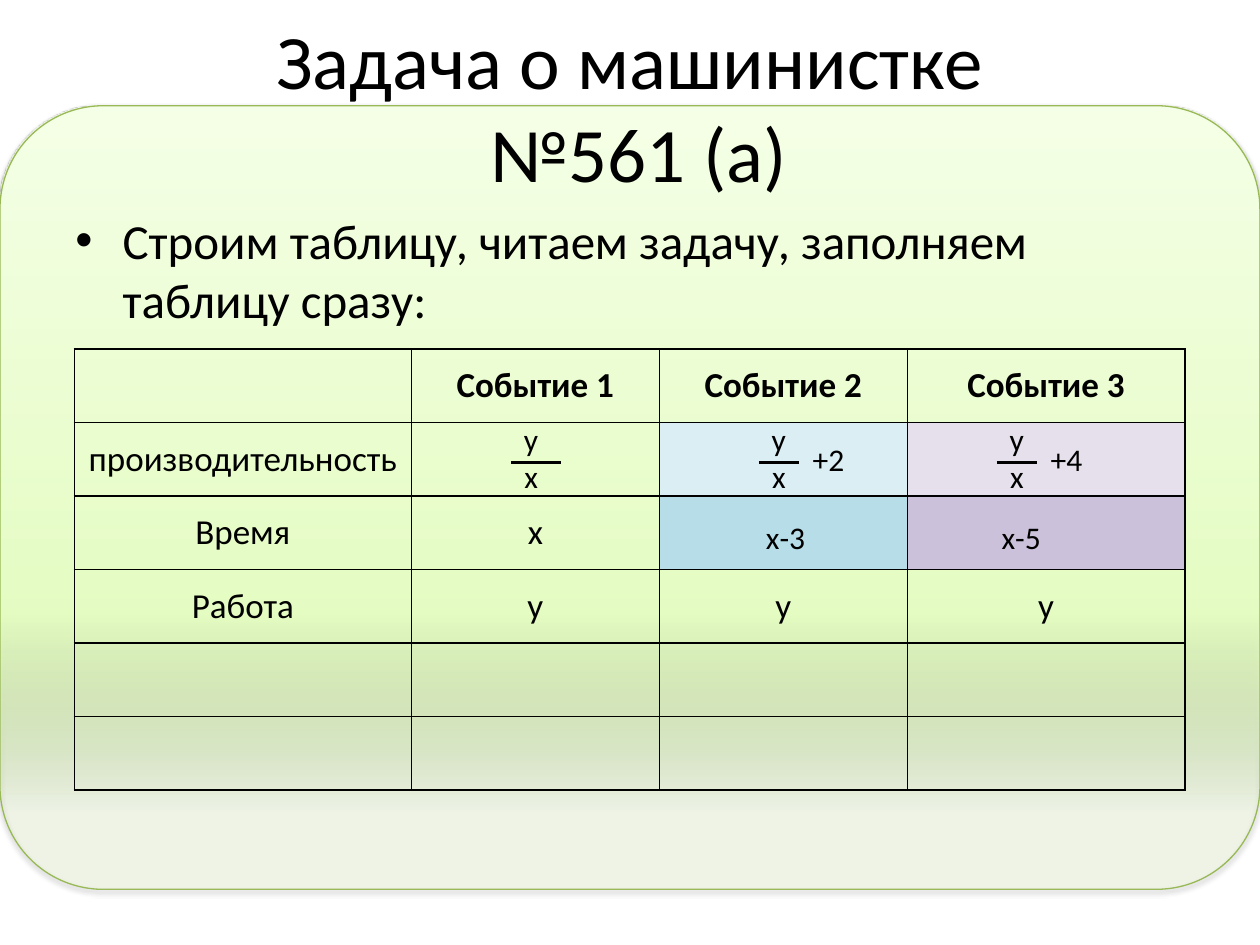
"""Build the slide about the typist problem with its table of events."""
import lxml.etree
import pptx
import pptx.dml.color
import pptx.enum.shapes
import pptx.enum.text
import pptx.oxml
import pptx.oxml.ns
import pptx.util

Pt = pptx.util.Pt
RGB = pptx.dml.color.RGBColor.from_string
CENTER = pptx.enum.text.PP_ALIGN.CENTER
MIDDLE = pptx.enum.text.MSO_ANCHOR.MIDDLE
NS = pptx.oxml.ns.nsdecls("a")
THEME = {
    "font": "Calibri", "text": "000000", "border": "98B955",
    "title": 44, "body": 28, "cell": 20, "label": 18,
    "gradient": [(10, "DAFDA7", 14), (35, "E4FCC2", 100), (100, "F5FFE7", 100)],
    "marks": {(1, 2): "DBEEF4", (1, 3): "E6E0EC", (2, 2): "B7DEE8", (2, 3): "CCC1DA"},
}


def write(tf, text, size, align=CENTER, bold=False):
    p = tf.paragraphs[0]
    p.text = text
    p.alignment = align
    p.font.name = THEME["font"]
    p.font.size = Pt(size)
    p.font.bold = bold
    p.font.color.rgb = RGB(THEME["text"])
    return p


def add_text(left, top, width, height, text, size, align=CENTER, wrap=True):
    tf = s.shapes.add_textbox(Pt(left), Pt(top), Pt(width), Pt(height)).text_frame
    tf.word_wrap = wrap
    write(tf, text, size, align)
    return tf


prs = pptx.Presentation()
prs.slide_width, prs.slide_height = Pt(720), Pt(540)
s = prs.slides.add_slide(prs.slide_layouts[6])

panel = s.shapes.add_shape(
    pptx.enum.shapes.MSO_SHAPE.ROUNDED_RECTANGLE, Pt(0), Pt(60.4), Pt(720), Pt(447.8))
panel.adjustments[0] = 0.132
panel.line.color.rgb = RGB(THEME["border"])
panel.line.width = Pt(0.75)
stops = "".join(
    f'<a:gs pos="{pos * 1000}"><a:srgbClr val="{color}"><a:alpha val="{alpha * 1000}"/></a:srgbClr></a:gs>'
    for pos, color, alpha in THEME["gradient"])
panel.line._ln.addprevious(pptx.oxml.parse_xml(
    f'<a:gradFill {NS} rotWithShape="1"><a:gsLst>{stops}</a:gsLst>'
    '<a:lin ang="16200000" scaled="0"/></a:gradFill>'))
panel.line._ln.addnext(pptx.oxml.parse_xml(
    f'<a:effectLst {NS}><a:outerShdw blurRad="{Pt(3.1)}" dist="{Pt(1.6)}" dir="5400000" rotWithShape="0">'
    f'<a:srgbClr val="{THEME["text"]}"><a:alpha val="38000"/></a:srgbClr></a:outerShdw></a:effectLst>'))

tf = add_text(36, 116.6, 648, 76, "Строим таблицу, читаем задачу, заполняем таблицу сразу:",
              THEME["body"], pptx.enum.text.PP_ALIGN.LEFT)
pPr = tf.paragraphs[0]._p.get_or_add_pPr()
pPr.set("marL", str(Pt(27)))
pPr.set("indent", str(Pt(-27)))
pPr.insert(0, pptx.oxml.parse_xml(f'<a:buFont {NS} typeface="Arial"/>'))
pPr.insert(1, pptx.oxml.parse_xml(f'<a:buChar {NS} char="•"/>'))

tf = add_text(41, -2.2, 648, 124.6, "Задача о машинистке \v№561 (а)", THEME["title"])
tf.vertical_anchor = MIDDLE

rows = [
    ["", "Событие 1", "Событие 2", "Событие 3"],
    ["производительность", "", "", ""],
    ["Время", "х", "", ""],
    ["Работа", "у", "у", "у"],
    [""] * 4,
    [""] * 4,
]
widths = [192.6, 141.7, 141.7, 158.7]
frame = s.shapes.add_table(len(rows), len(widths), Pt(42.5), Pt(199.5), Pt(sum(widths)), Pt(252))
table = frame.table
for column, width in zip(table.columns, widths):
    column.width = Pt(width)
for i, row in enumerate(rows):
    for j, text in enumerate(row):
        cell = table.cell(i, j)
        cell.vertical_anchor = MIDDLE
        write(cell.text_frame, text, THEME["cell"], bold=i == 0)
        if (i, j) in THEME["marks"]:
            cell.fill.solid()
            cell.fill.fore_color.rgb = RGB(THEME["marks"][i, j])
        else:
            cell.fill.background()
        tcPr = cell._tc.get_or_add_tcPr()
        for k, side in enumerate(["lnL", "lnR", "lnT", "lnB"]):
            tcPr.insert(k, pptx.oxml.parse_xml(
                f'<a:{side} {NS} w="{Pt(1)}"><a:solidFill><a:srgbClr val="{THEME["text"]}"/>'
                f'</a:solidFill></a:{side}>'))

for left, bar, extra in [(292, 28.4, ""), (433.6, 22.8, "+2"), (569.6, 22.8, "+4")]:
    add_text(left, 236.2, 22.8, 29, "у", THEME["label"], wrap=False)
    add_text(left + 0.3, 257.8, 22.4, 29, "х", THEME["label"], wrap=False)
    line = s.shapes.add_connector(
        pptx.enum.shapes.MSO_CONNECTOR.STRAIGHT, Pt(left), Pt(264.2), Pt(left + bar), Pt(264.2))
    line.line.color.rgb = RGB(THEME["text"])
    line.line.width = Pt(1.5)
    lxml.etree.SubElement(line._element.spPr, pptx.oxml.ns.qn("a:effectLst"))
    if extra:
        add_text(left + 22.8, 247.7, 34, 29, extra, THEME["label"])

for left, text in [(424, "х-3"), (558.7, "х-5")]:
    add_text(left, 292.3, 49.7, 29, text, THEME["label"])

prs.save("out.pptx")
